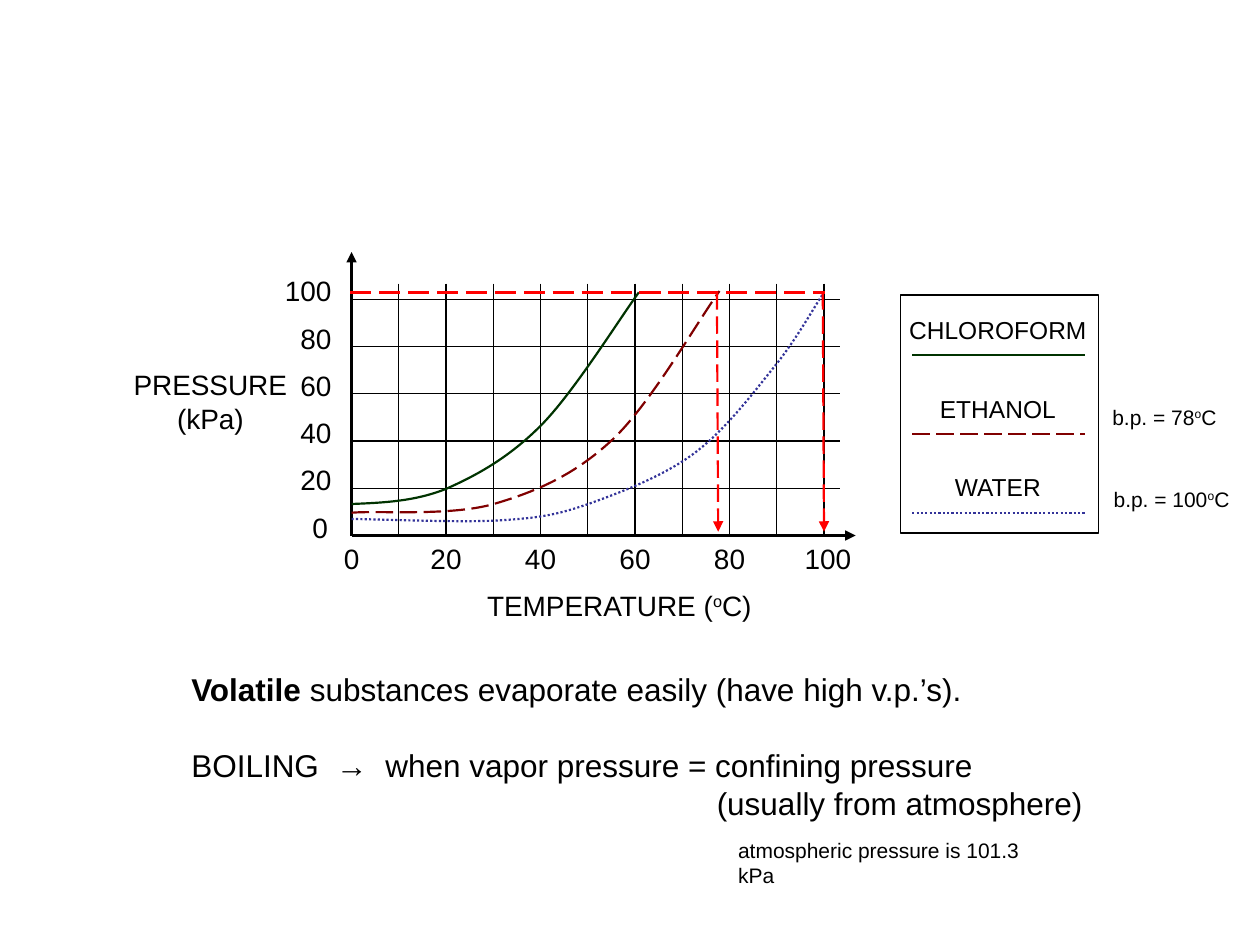
from lxml import etree
from pptx import Presentation
from pptx.dml.color import RGBColor
from pptx.enum.dml import MSO_LINE
from pptx.enum.shapes import MSO_CONNECTOR, MSO_SHAPE
from pptx.enum.text import MSO_ANCHOR, PP_ALIGN
from pptx.oxml.ns import qn
from pptx.util import Inches, Pt

BLACK, RED = "000000", "FF0000"
X0, Y0, STEP = 2.79, 4.25, 3 / 8  # plot corner and size of a grid cell
CONFINING_Y = 2.32

# name, colour, dash, curve: start, then two controls and an end per Bezier segment
SUBSTANCES = [
    ("CHLOROFORM", "003300", None, [
        (2.79, 4),
        (3.04, 3.99), (3.29, 3.98), (3.54, 3.88),
        (3.79, 3.77), (4.04, 3.63), (4.29, 3.38),
        (4.55, 3.12), (4.91, 2.54), (5.07, 2.32)]),
    ("ETHANOL", "800000", MSO_LINE.LONG_DASH, [
        (2.79, 4.07),
        (2.98, 4.05), (3.57, 4.1), (3.92, 4),
        (4.26, 3.9), (4.56, 3.77), (4.86, 3.49),
        (5.16, 3.21), (5.53, 2.56), (5.71, 2.31)]),
    ("WATER", "333399", MSO_LINE.ROUND_DOT, [
        (2.79, 4.12),
        (2.99, 4.12), (3.66, 4.15), (3.97, 4.13),
        (4.28, 4.11), (4.41, 4.09), (4.67, 4),
        (4.92, 3.91), (5.27, 3.78), (5.52, 3.59),
        (5.77, 3.4), (6, 3.09), (6.17, 2.88),
        (6.34, 2.66), (6.46, 2.44), (6.54, 2.32)]),
]


def rgb(color):
    return RGBColor.from_string(color)


def style_line(line, color, width, dash=None):
    line.color.rgb = rgb(color)
    line.width = Pt(width)
    if dash:
        line.dash_style = dash


def add_line(s, start, end, color=BLACK, width=0.75, dash=None, arrow=False):
    sp = s.shapes.add_connector(MSO_CONNECTOR.STRAIGHT,
                                *(Inches(v) for v in (*start, *end)))
    style_line(sp.line, color, width, dash)
    if arrow:
        etree.SubElement(sp.line._get_or_add_ln(), qn("a:tailEnd"), type="triangle")
    etree.SubElement(sp._element.spPr, qn("a:effectLst"))


def add_curve(s, color, dash, points):
    """Build an outline through all points, then join each three into a Bezier."""
    start, *rest = [(Inches(x), Inches(y)) for x, y in points]
    builder = s.shapes.build_freeform(*start)
    builder.add_line_segments(rest, close=False)
    sp = builder.convert_to_shape()
    lines = list(sp._element.iter(qn("a:lnTo")))
    for i in range(0, len(lines), 3):
        curve = etree.SubElement(lines[i].getparent(), qn("a:cubicBezTo"))
        for line in lines[i:i + 3]:
            curve.append(line[0])
            line.getparent().remove(line)
    sp.shadow.inherit = False
    sp.fill.background()
    style_line(sp.line, color, 1.25, dash)


def add_runs(p, text, size):
    """Fill a paragraph; text between bars is superscript."""
    for i, part in enumerate(text.split("|")):
        if not part:
            continue
        r = p.add_run()
        r.text = part
        r.font.name = "Arial"
        r.font.size = Pt(size)
        r.font.color.rgb = rgb(BLACK)
        if i % 2:
            r.font._element.set("baseline", "30000")


def add_text(s, box, lines, size=16, align=PP_ALIGN.CENTER):
    sp = s.shapes.add_textbox(*(Inches(v) for v in box))
    tf = sp.text_frame
    tf.word_wrap = True
    for i, line in enumerate(lines):
        p = tf.add_paragraph() if i else tf.paragraphs[0]
        p.alignment = align
        add_runs(p, line, size)
    return tf


def add_grid(s):
    add_line(s, (X0, Y0), (X0, 2), width=1.5, arrow=True)
    add_line(s, (X0, Y0), (6.79, Y0), width=1.5, arrow=True)
    for i in range(1, 11):
        x = X0 + i * STEP
        add_line(s, (x, 2.25), (x, Y0))
    for i in range(1, 6):
        y = Y0 - i * STEP
        add_line(s, (X0, y), (6.67, y))


def add_axis_labels(s):
    for i in range(6):
        label = str(20 * i)
        x_width = 0.75 if i == 5 else 0.5
        x_center = X0 + 2 * i * STEP + (0.03 if i == 5 else 0)
        add_text(s, (x_center - x_width / 2, Y0, x_width, 0.38), [label])
        y_width = 0.5 + 0.125 * (len(label) - 1)
        right = X0 + (0.03 if i else 0)
        add_text(s, (right - y_width, Y0 - 0.25 - i * STEP, y_width, 0.38), [label])
    add_text(s, (3.29, 4.62, 3.25, 0.38), ["TEMPERATURE (|o|C)"])
    add_text(s, (0.92, 2.87, 1.5, 0.62), ["PRESSURE", "(kPa)"])


def add_legend(s):
    for i, (name, color, dash, _) in enumerate(SUBSTANCES):
        y = 2.45 + i * 5 / 8
        add_text(s, (7.11, y, 1.62, 0.5), [name], 14)
        add_line(s, (7.24, y + 0.37), (8.61, y + 0.37), color, 1.25, dash)


def add_legend_frame(s):
    sp = s.shapes.add_shape(MSO_SHAPE.RECTANGLE, Inches(7.15), Inches(2.34),
                            Inches(1.57), Inches(1.89))
    sp.shadow.inherit = False
    sp.fill.background()
    style_line(sp.line, BLACK, 0.75)


def add_boiling_points(s):
    dash = MSO_LINE.LONG_DASH
    add_line(s, (2.78, CONFINING_Y), (6.55, CONFINING_Y), RED, 1.5, dash)
    for x, box, temperature in ((5.69, (8.73, 3.16, 1.04, 0.3), 78),
                                (6.53, (8.74, 3.81, 1.13, 0.3), 100)):
        add_line(s, (x, CONFINING_Y), (x + 0.01, 4.22), RED, 1.25, dash, arrow=True)
        tf = add_text(s, box, [f"b.p. = {temperature}|o|C"], 12, PP_ALIGN.LEFT)
        tf.margin_right = 0


def add_explanation(s):
    tf = add_text(s, (1.42, 5.27, 7.28, 1.3), [
        "Volatile ||substances evaporate easily (have high v.p.’s).",
        "BOILING\t→\twhen vapor pressure = confining pressure",
        "(usually from atmosphere)"], 18, PP_ALIGN.LEFT)
    tf.vertical_anchor = MSO_ANCHOR.MIDDLE
    tf.margin_right = 0
    volatile, boiling, source = tf.paragraphs
    volatile.runs[0].font.bold = True
    for p in tf.paragraphs:
        p.line_spacing = Pt(21.7)
    boiling.space_before = Pt(21.7)
    tabs = etree.SubElement(boiling._p.get_or_add_pPr(), qn("a:tabLst"))
    for position in (1.15, 1.54):
        etree.SubElement(tabs, qn("a:tab"), pos=str(Inches(position)), algn="l")
    source._p.get_or_add_pPr().set("marL", str(Inches(4.17)))
    source._p.pPr.set("indent", "0")
    add_text(s, (5.76, 6.6, 2.6, 0.3), ["atmospheric pressure is 101.3 kPa"], 12,
             PP_ALIGN.LEFT)


def main():
    prs = Presentation()
    prs.slide_width, prs.slide_height = Inches(10), Inches(7.5)
    s = prs.slides.add_slide(prs.slide_layouts[6])
    add_grid(s)
    add_axis_labels(s)
    for _, color, dash, points in SUBSTANCES:
        add_curve(s, color, dash, points)
    add_legend(s)
    add_legend_frame(s)
    add_boiling_points(s)
    add_explanation(s)
    prs.save("out.pptx")


if __name__ == "__main__":
    main()
